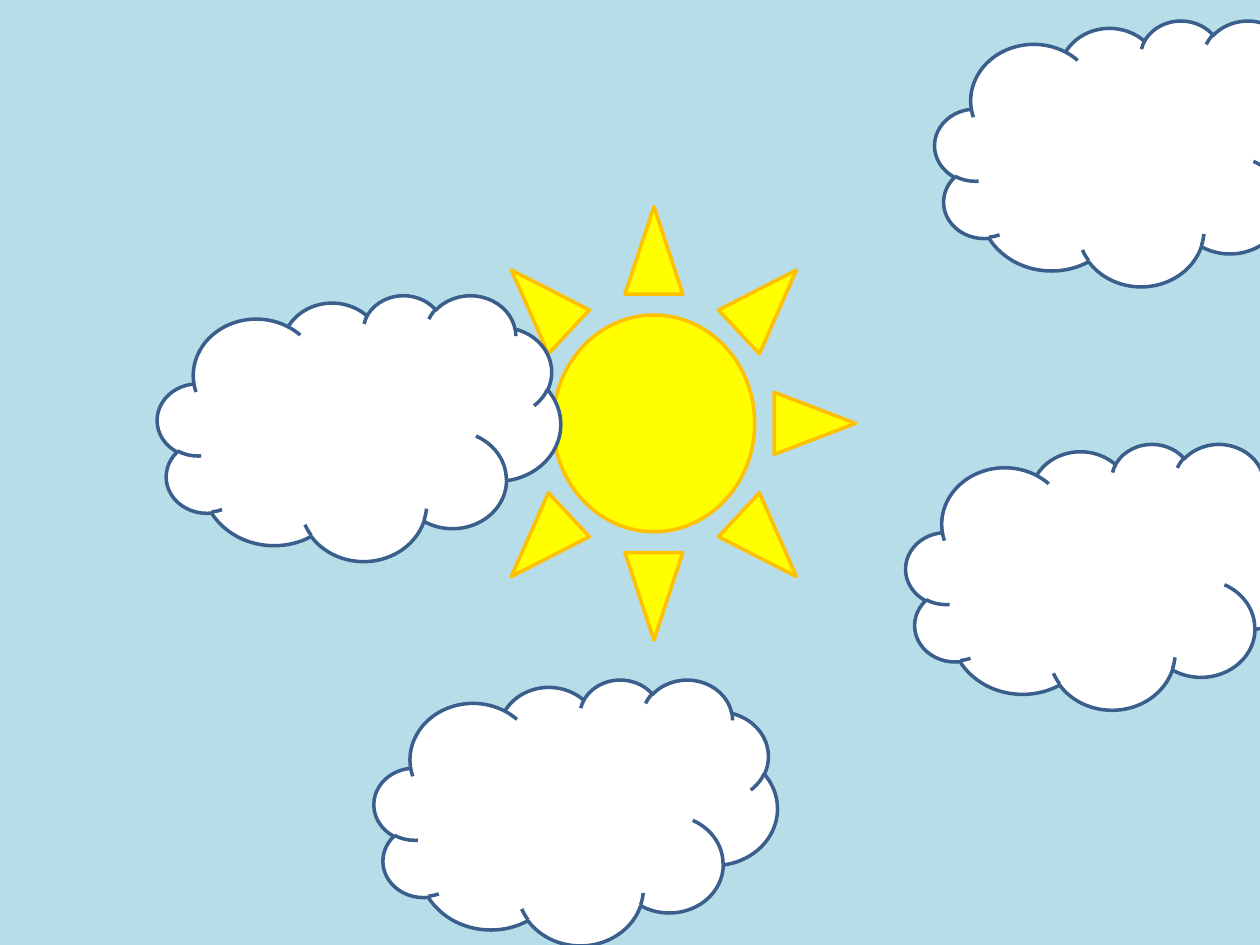
from pptx import Presentation
from pptx.dml.color import RGBColor
from pptx.enum.shapes import MSO_SHAPE
from pptx.util import Inches, Pt

SUN = MSO_SHAPE.SUN
CLOUD = MSO_SHAPE.CLOUD
SKY_BLUE = RGBColor(0xB7, 0xDE, 0xE8)
YELLOW = RGBColor(0xFF, 0xFF, 0x00)
ORANGE = RGBColor(0xFF, 0xC0, 0x00)
WHITE = RGBColor(0xFF, 0xFF, 0xFF)
NAVY = RGBColor(0x3A, 0x5F, 0x8C)
BLANK_LAYOUT = 6
CLOUD_WIDTH, CLOUD_HEIGHT = 3.2, 2.11

presentation = Presentation()
presentation.slide_width = Inches(10)
presentation.slide_height = Inches(7.5)
slide = presentation.slides.add_slide(presentation.slide_layouts[BLANK_LAYOUT])
slide.background.fill.solid()
slide.background.fill.fore_color.rgb = SKY_BLUE


def add_sky_shape(kind, left, top, width, height, fill_color, line_color):
    shape = slide.shapes.add_shape(
        kind, Inches(left), Inches(top), Inches(width), Inches(height)
    )
    shape.shadow.inherit = False
    shape.fill.solid()
    shape.fill.fore_color.rgb = fill_color
    shape.line.color.rgb = line_color
    shape.line.width = Pt(2)


add_sky_shape(SUN, 3.59, 1.64, 3.2, 3.44, YELLOW, ORANGE)

cloud_positions = [(7.42, 0.16), (2.97, 5.39), (7.19, 3.52), (1.25, 2.34)]
for left, top in cloud_positions:
    add_sky_shape(CLOUD, left, top, CLOUD_WIDTH, CLOUD_HEIGHT, WHITE, NAVY)

presentation.save("out.pptx")
